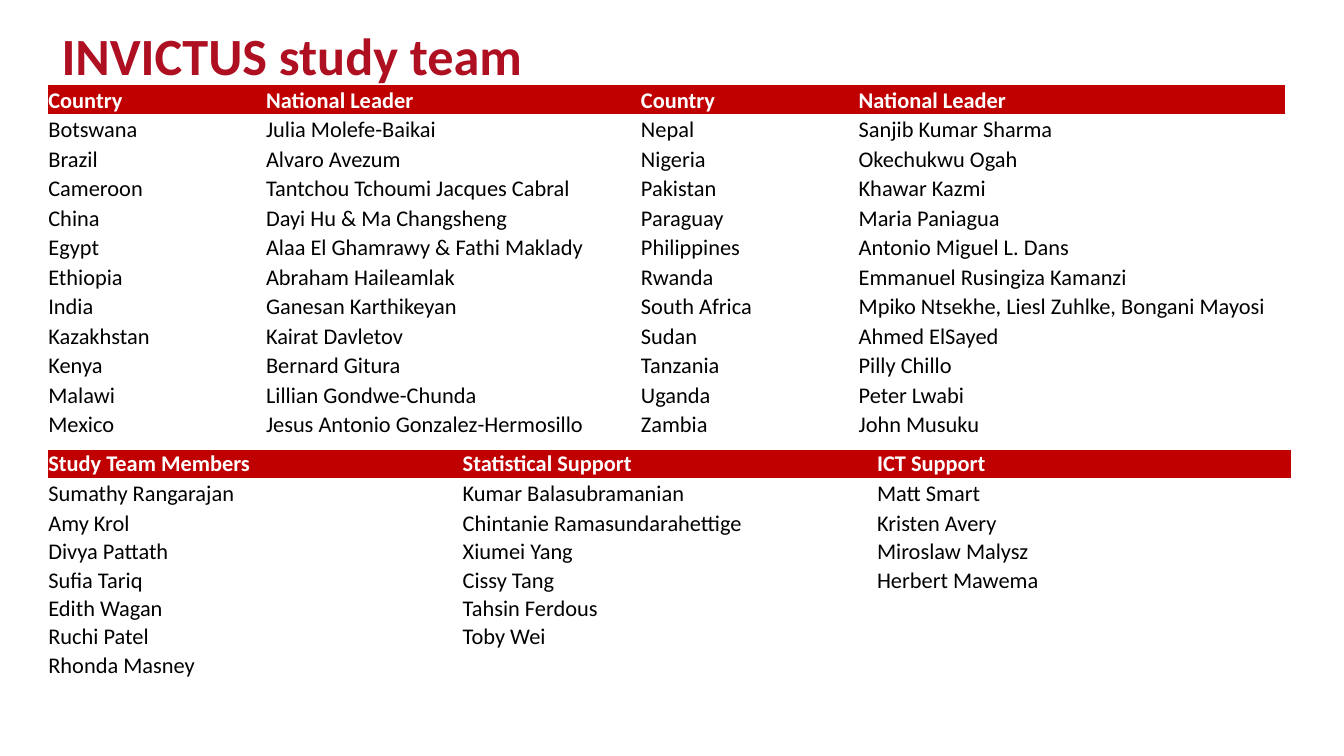
from dataclasses import dataclass

from pptx import Presentation
from pptx.dml.color import RGBColor
from pptx.enum.text import MSO_ANCHOR
from pptx.util import Inches, Pt

TITLE_RED = RGBColor(0xAE, 0x10, 0x22)
HEADER_RED = RGBColor(0xC0, 0x00, 0x00)
WHITE = RGBColor(0xFF, 0xFF, 0xFF)
BLACK = RGBColor(0x00, 0x00, 0x00)
FONT = "Calibri"
CELL_SIZE = 12
LEFT = 0.36
NO_STYLE_NO_GRID = "{2D5ABB26-0587-4C30-8999-92F81FD0307C}"


@dataclass
class TeamTable:
    top: float
    widths: list[float]
    heights: list[float]
    anchor: MSO_ANCHOR
    rows: list[tuple[str, ...]]


LEADERS = TeamTable(
    top=0.63,
    widths=[1.62, 2.79, 1.62, 3.17],
    heights=[2.64 / 12] * 12,
    anchor=MSO_ANCHOR.BOTTOM,
    rows=[
        ("Country", "National Leader", "Country", "National Leader"),
        ("Botswana", "Julia Molefe-Baikai", "Nepal", "Sanjib Kumar Sharma"),
        ("Brazil", "Alvaro Avezum", "Nigeria", "Okechukwu Ogah"),
        ("Cameroon", "Tantchou Tchoumi Jacques Cabral", "Pakistan", "Khawar Kazmi"),
        ("China", "Dayi Hu & Ma Changsheng", "Paraguay", "Maria Paniagua"),
        ("Egypt", "Alaa El Ghamrawy & Fathi Maklady", "Philippines", "Antonio Miguel L. Dans"),
        ("Ethiopia", "Abraham Haileamlak", "Rwanda", "Emmanuel Rusingiza Kamanzi"),
        ("India", "Ganesan Karthikeyan", "South Africa", "Mpiko Ntsekhe, Liesl Zuhlke, Bongani Mayosi"),
        ("Kazakhstan", "Kairat Davletov", "Sudan", "Ahmed ElSayed"),
        ("Kenya", "Bernard Gitura", "Tanzania", "Pilly Chillo"),
        ("Malawi", "Lillian Gondwe-Chunda", "Uganda", "Peter Lwabi"),
        ("Mexico", "Jesus Antonio Gonzalez-Hermosillo", "Zambia", "John Musuku"),
    ],
)

SUPPORT = TeamTable(
    top=3.35,
    widths=[9.25 / 3] * 3,
    heights=[0.21, 0.23] + [1.27 / 6] * 6,
    anchor=MSO_ANCHOR.MIDDLE,
    rows=[
        ("Study Team Members", "Statistical Support", "ICT Support"),
        ("Sumathy Rangarajan", "Kumar Balasubramanian", "Matt Smart"),
        ("Amy Krol", "Chintanie Ramasundarahettige", "Kristen Avery"),
        ("Divya Pattath", "Xiumei Yang", "Miroslaw Malysz"),
        ("Sufia Tariq", "Cissy Tang", "Herbert Mawema"),
        ("Edith Wagan", "Tahsin Ferdous", ""),
        ("Ruchi Patel", "Toby Wei", ""),
        ("Rhonda Masney", "", ""),
    ],
)


def write(p, text: str, *, size: int, color: RGBColor, bold: bool = False) -> None:
    if not text:
        # Keep an empty cell as low as its row
        p._p.get_or_add_endParaRPr().set("sz", str(size * 100))
        return
    r = p.add_run()
    r.text = text
    r.font.name = FONT
    r.font.size = Pt(size)
    r.font.bold = bold
    r.font.color.rgb = color


def add_title(s, text: str) -> None:
    box = s.shapes.add_textbox(Inches(LEFT), Inches(0.23), Inches(8.35), Inches(0.47))
    tf = box.text_frame
    tf.word_wrap = True
    tf.vertical_anchor = MSO_ANCHOR.MIDDLE
    p = tf.paragraphs[0]
    p.line_spacing = Pt(25)
    write(p, text, size=28, color=TITLE_RED, bold=True)


def add_team_table(s, team: TeamTable) -> None:
    frame = s.shapes.add_table(
        len(team.rows), len(team.widths), Inches(LEFT), Inches(team.top),
        Inches(sum(team.widths)), Inches(sum(team.heights)))
    table = frame.table
    table.horz_banding = False
    table._tbl.tblPr[0].text = NO_STYLE_NO_GRID
    for column, width in zip(table.columns, team.widths):
        column.width = Inches(width)
    for i, (row, height, texts) in enumerate(zip(table.rows, team.heights, team.rows)):
        row.height = Inches(height)
        header = i == 0
        for cell, text in zip(row.cells, texts):
            cell.margin_left = cell.margin_right = 0
            cell.margin_top = cell.margin_bottom = 0
            cell.vertical_anchor = team.anchor
            if header:
                cell.fill.solid()
                cell.fill.fore_color.rgb = HEADER_RED
            else:
                cell.fill.background()
            write(cell.text_frame.paragraphs[0], text, size=CELL_SIZE,
                  color=WHITE if header else BLACK, bold=header)


def main() -> None:
    # 16:9 slide
    prs = Presentation()
    prs.slide_width = Inches(10)
    prs.slide_height = Inches(10 * 9 / 16)
    s = prs.slides.add_slide(prs.slide_layouts[6])

    # Title
    add_title(s, "INVICTUS study team")

    # National leaders above, study team and support below
    for team in (LEADERS, SUPPORT):
        add_team_table(s, team)

    prs.save("out.pptx")


if __name__ == "__main__":
    main()
